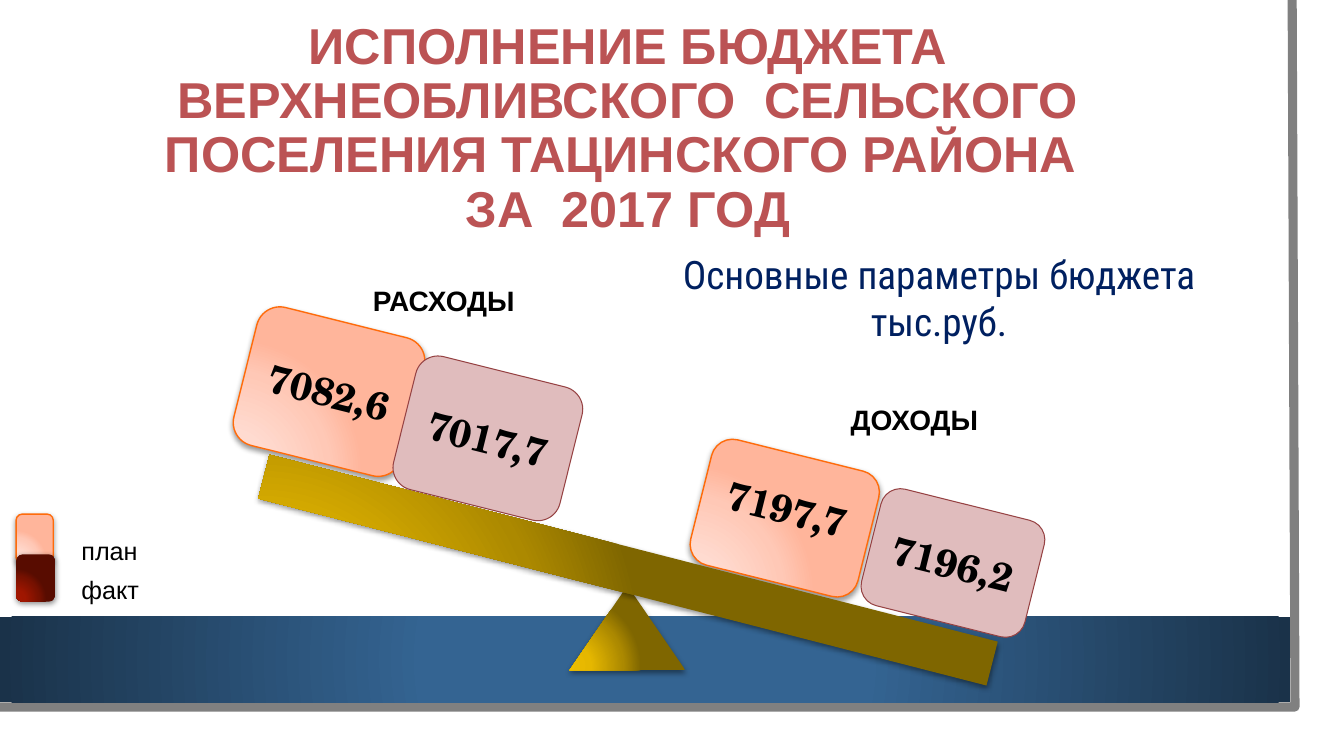
from dataclasses import dataclass

from lxml import etree
from pptx import Presentation
from pptx import util as u
from pptx.dml.color import RGBColor
from pptx.enum import shapes, text
from pptx.oxml import parse_xml
from pptx.oxml.ns import nsdecls, qn

SHAPE = shapes.MSO_SHAPE
CENTER = text.PP_ALIGN.CENTER
MIDDLE = text.MSO_ANCHOR.MIDDLE
TILT = 14


@dataclass(frozen=True)
class Theme:
    white: str = "FFFFFF"
    frame: str = "808080"
    black: str = "000000"
    heading: str = "BB5354"
    subtitle: str = "002060"
    plan_line: str = "FF6B0A"
    fact_fill: str = "E0BCBD"
    fact_line: str = "964243"
    band: tuple = ((34, "346492"), (100, "1A3249"))
    gold: tuple = ((0, "EDBE00"), (30, "E5B700"), (75, "AC8900"), (100, "7F6600"))
    plan: tuple = ((0, "FFDED5"), (30, "FFDBD0"), (75, "FFC8B6"), (100, "FFB59B"))
    fact: tuple = ((0, "A41700"), (30, "9F1600"), (75, "771100"), (100, "580C00"))
    centre_focus: tuple = (50, 50, 50, 50)
    corner_focus: tuple = (5, 100, 120, 10)
    plain_font: str = "Arial"
    subtitle_font: str = "Roboto Condensed"
    value_font: str = "TeX Gyre Schola"
    heading_size: int = 36
    value_size: int = 28
    label_size: int = 20
    legend_size: int = 18


class SlideBuilder:
    def __init__(self, slide, theme):
        self.slide = slide
        self.theme = theme

    def shape(self, kind, at, fill, line=None, rotation=0, focus=None, shadow=None):
        """Fill is a colour or gradient stops; shadow is (opacity %, blur, distance)."""
        item = self.slide.shapes.add_shape(kind, *map(u.Pt, at))
        item.rotation = rotation
        item.shadow.inherit = False
        if isinstance(fill, str):
            item.fill.solid()
            item.fill.fore_color.rgb = RGBColor.from_string(fill)
        else:
            self.radial_fill(item, fill, focus or self.theme.corner_focus)
        self.outline(item, line)
        if shadow:
            self.cast_shadow(item, *shadow)
        return item

    def outline(self, item, line):
        if line is None:
            item.line.fill.background()
            return
        color, width = line
        item.line.color.rgb = RGBColor.from_string(color)
        item.line.width = u.Pt(width)

    def radial_fill(self, item, stops, focus):
        marks = "".join(
            f'<a:gs pos="{pos * 1000}"><a:srgbClr val="{color}"/></a:gs>' for pos, color in stops
        )
        edges = " ".join(f'{side}="{value * 1000}"' for side, value in zip("ltrb", focus))
        geometry = item._element.spPr.find(qn("a:prstGeom"))
        geometry.addnext(parse_xml(
            f'<a:gradFill {nsdecls("a")} rotWithShape="1"><a:gsLst>{marks}</a:gsLst>'
            f'<a:path path="circle"><a:fillToRect {edges}/></a:path></a:gradFill>'
        ))

    def cast_shadow(self, item, opacity, blur, distance):
        effects = item._element.spPr.find(qn("a:effectLst"))
        outer = etree.SubElement(
            effects, qn("a:outerShdw"), blurRad=str(u.Pt(blur)), dist=str(u.Pt(distance)),
            dir="5400000", rotWithShape="0",
        )
        color = etree.SubElement(outer, qn("a:srgbClr"), val=self.theme.black)
        etree.SubElement(color, qn("a:alpha"), val=str(opacity * 1000))

    def frame(self, points, color, width):
        outline = self.slide.shapes.build_freeform(*points[0], scale=float(u.Pt(1)))
        outline.add_line_segments(points[1:], close=False)
        item = outline.convert_to_shape()
        item.shadow.inherit = False
        item.fill.background()
        self.outline(item, (color, width))

    def set_words(self, item, words, font, size, color=None, bold=False, align=None,
                  anchor=None, spacing=None):
        box = item.text_frame
        box.word_wrap = True
        if anchor is not None:
            box.vertical_anchor = anchor
        para = box.paragraphs[0]
        para.text = words
        for name, value in {"alignment": align, "line_spacing": spacing}.items():
            setattr(para, name, value)
        for span in para.runs:
            for name, value in {"name": font, "size": u.Pt(size), "bold": bold}.items():
                setattr(span.font, name, value)
            span.font.color.rgb = RGBColor.from_string(color or self.theme.black)

    def label(self, at, words, font, size, **style):
        box = self.slide.shapes.add_textbox(*map(u.Pt, at))
        self.set_words(box, words, font, size, **style)

    def plan_box(self, at, rotation=0):
        line = (self.theme.plan_line, 1)
        return self.shape(SHAPE.ROUNDED_RECTANGLE, at, self.theme.plan, line, rotation,
                          shadow=(40, 4, 2))

    def fact_box(self, at, rotation=0):
        line = (self.theme.fact_line, 0.75)
        return self.shape(SHAPE.ROUNDED_RECTANGLE, at, self.theme.fact_fill, line, rotation)


def main():
    deck = Presentation()
    deck.slide_width, deck.slide_height = u.Pt(960), u.Pt(540)
    theme = Theme()
    page = SlideBuilder(deck.slides.add_slide(deck.slide_layouts[6]), theme)
    soft = (42, 4, 1.6)

    page.shape(SHAPE.RECTANGLE, (0, 0, 943.2, 523.4), theme.white)
    page.frame([(923, 0), (925.2, 505.4), (-2.2, 504.7)], theme.frame, 6.5)
    page.shape(SHAPE.RECTANGLE, (0, 440.6, 921.6, 61.2), theme.band, focus=theme.centre_focus)

    page.label(
        (25.2, 0, 846.7, 185),
        "ИСПОЛНЕНИЕ БЮДЖЕТА ВЕРХНЕОБЛИВСКОГО  СЕЛЬСКОГО ПОСЕЛЕНИЯ ТАЦИНСКОГО РАЙОНА \v"
        "ЗА  2017 ГОД",
        theme.plain_font, theme.heading_size, color=theme.heading, bold=True,
        align=CENTER, anchor=MIDDLE, spacing=0.9,
    )
    page.label(
        (348.5, 182.9, 644.4, 59), "Основные параметры бюджета\vтыс.руб.",
        theme.subtitle_font, theme.value_size, color=theme.subtitle,
        align=CENTER, anchor=MIDDLE,
    )

    page.shape(SHAPE.ISOSCELES_TRIANGLE, (406.8, 418.3, 82.8, 60.5), theme.gold, shadow=soft)
    weights = [
        (page.plan_box, (499, 324, 123.1, 92.2), "7197,7", 18),
        (page.fact_box, (620.6, 359.3, 120.2, 85.7), "7196,2", 3.6),
        (page.plan_box, (173.5, 229, 123.1, 101.5), "7082,6", 3.6),
        (page.fact_box, (287.3, 264.2, 122.4, 97.9), "7017,7", 3.6),
    ]
    for draw, at, value, bottom in weights:
        weight = draw(at, TILT)
        weight.text_frame.margin_bottom = u.Pt(bottom)
        page.set_words(weight, value, theme.value_font, theme.value_size, bold=True,
                       align=CENTER, anchor=MIDDLE)
    page.shape(SHAPE.RECTANGLE, (180, 391, 537.1, 32.4), theme.gold, rotation=14.4, shadow=soft)

    for at, words in [((600.5, 283.7, 129.6, 53.3), "ДОХОДЫ"),
                      ((259.2, 198.7, 160.6, 31.7), "РАСХОДЫ")]:
        page.label(at, words, theme.plain_font, theme.label_size, bold=True)

    page.plan_box((11.5, 367.2, 26.6, 35.3))
    page.shape(SHAPE.ROUNDED_RECTANGLE, (11.5, 396, 28.1, 33.8), theme.fact, shadow=soft)
    for row, words in enumerate(["план", "факт"]):
        page.label((51.1, 378.7 + 28.1 * row, 67.7, 28.8), words,
                   theme.plain_font, theme.legend_size)

    deck.save("out.pptx")


if __name__ == "__main__":
    main()
